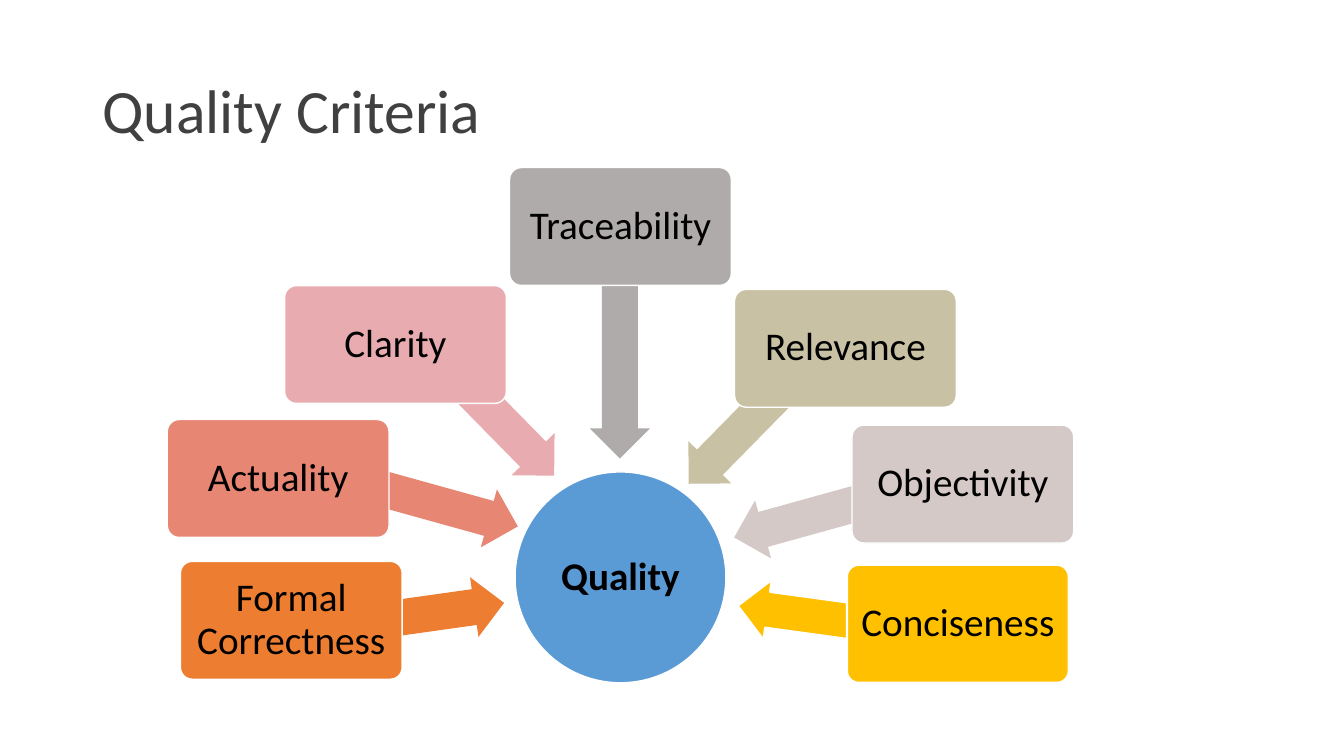
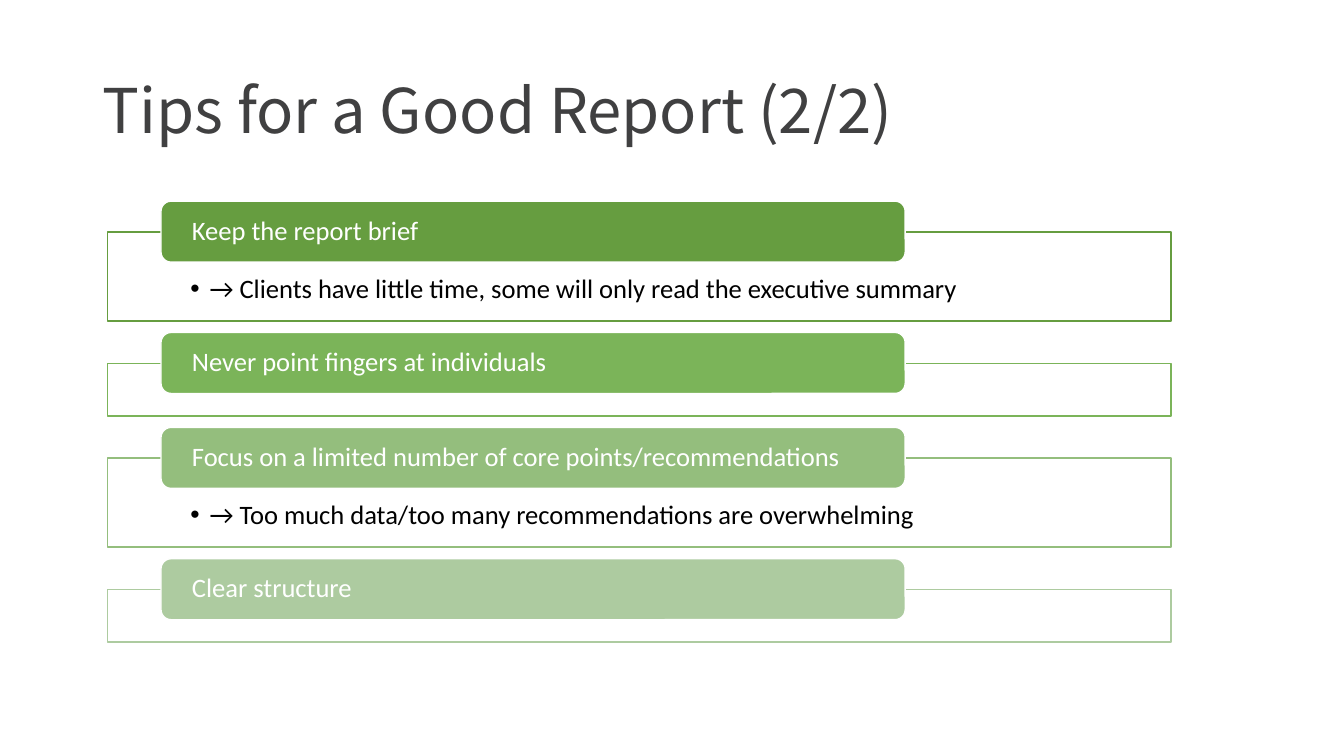
from pptx import Presentation
from pptx.dml.color import RGBColor as Rgb
from pptx.enum.shapes import MSO_SHAPE as Kind
from pptx.enum.text import MSO_ANCHOR as Anchor, MSO_AUTO_SIZE as Fit, PP_ALIGN as Align
from pptx.oxml.ns import qn
from pptx.util import Pt
from lxml.etree import SubElement as Sub

HUES = {
    "white": "FFFFFF", "black": "000000", "title": "404041", "hub": "5B9BD5",
    "orange": "ED7D31", "coral": "E78672", "pink": "E8ACB0", "gray": "AFABAB",
    "sand": "C9C1A3", "mist": "D4C9C6", "gold": "FFC000",
    "green1": "669D40", "green2": "7BB459", "green3": "94BE7D", "green4": "ADCBA0",
}
FONT = "Calibri"
BOX = (158.4, 84.2)
THICK = 43
HUB = (367.9, 337.1, 150.6, 150.6)

CRITERIA = [
    ("Formal Correctness", "orange", (128.9, 401), (207.4, 419.8), 153.4, 172),
    ("Actuality", "coral", (119.5, 299.7), (203.8, 331.9), 169.2, 195.5),
    ("Clarity", "pink", (203.3, 204), (272.2, 266.4), 145.4, 225.5),
    ("Traceability", "gray", (364, 119.7), (360, 223.2), 165.6, 270),
    ("Relevance", "sand", (524.7, 206.7), (470.2, 272.2), 145.4, 314.5),
    ("Objectivity", "mist", (608.6, 303.7), (521.3, 339.8), 169.2, 344.5),
    ("Conciseness", "gold", (605, 403.5), (526.3, 421.9), 158.4, 7.8),
]
TIPS = [
    ("Keep the report brief", "green1",
     "→ Clients have little time, some will only read the executive summary"),
    ("Never point fingers at individuals", "green2", None),
    ("Focus on a limited number of core points/recommendations", "green3",
     "→ Too much data/too many recommendations are overwhelming"),
    ("Clear structure", "green4", None),
]


def tint(name):
    """Return the named colour."""
    return Rgb.from_string(HUES[name])


def write(para, text, size, hue, font=FONT, bold=False):
    """Add one styled run to a paragraph."""
    para.line_spacing = 0.9
    run = para.add_run()
    run.text = text
    run.font.size = Pt(size)
    run.font.name = font
    run.font.bold = bold
    run.font.color.rgb = tint(hue)


def shape(slide, kind, area, fill, line=None, width=1):
    """Add a flat filled shape with an optional outline."""
    item = slide.shapes.add_shape(kind, *map(Pt, area))
    item.shadow.inherit = False
    item.fill.solid()
    item.fill.fore_color.rgb = tint(fill)
    if line:
        item.line.color.rgb = tint(line)
        item.line.width = Pt(width)
    else:
        item.line.fill.background()
    return item


def label(item, text, size, hue, pads, align, anchor=Anchor.MIDDLE, bold=False):
    """Write text inside a shape and return its paragraph."""
    frame = item.text_frame
    frame.word_wrap = True
    frame.vertical_anchor = anchor
    (frame.margin_left, frame.margin_top,
     frame.margin_right, frame.margin_bottom) = map(Pt, pads)
    para = frame.paragraphs[0]
    para.alignment = align
    write(para, text, size, hue, bold=bold)
    return para


def bullet(para, indent):
    """Give a paragraph a hanging round bullet."""
    props = para._p.get_or_add_pPr()
    props.set("marL", str(Pt(indent)))
    props.set("indent", str(-Pt(indent)))
    Sub(props, qn("a:buFont")).set("typeface", "Arial")
    Sub(props, qn("a:buChar")).set("char", "•")


def fade(item, share):
    """Set the opacity of a solid fill in percent."""
    color = item._element.spPr.find(qn("a:solidFill"))[0]
    Sub(color, qn("a:alpha")).set("val", str(share * 1000))


def page(deck, title, font):
    """Add a slide with its title."""
    slide = deck.slides.add_slide(deck.slide_layouts[5])
    frame = slide.shapes.title.text_frame
    frame.auto_size = Fit.NONE
    para = frame.paragraphs[0]
    para.alignment = Align.LEFT
    write(para, title, 44, "title", font)
    return slide


def arrow(slide, spot, length, turn, hue, line):
    """Add a turned block arrow."""
    item = shape(slide, Kind.LEFT_ARROW, (*spot, length, THICK), hue, line, 1.5)
    item.adjustments[0] = 0.6
    item.adjustments[1] = 0.5
    item.rotation = turn


def wheel(slide):
    """Draw the hub and the criteria that point to it."""
    hub = shape(slide, Kind.OVAL, HUB, "hub", "white")
    label(hub, "Quality", 28, "black", (0,) * 4, Align.CENTER, bold=True)
    for text, hue, spot, start, length, turn in CRITERIA:
        edged = hue == "gold"
        arrow(slide, start, length, turn, hue, "white" if edged else None)
        box = shape(slide, Kind.ROUNDED_RECTANGLE, (*spot, *BOX), hue,
                    "white", 1.5 if edged else 1)
        box.adjustments[0] = 0.1
        label(box, text, 28, "black", (3,) * 4, Align.CENTER)


def stack(slide):
    """Draw the tips as tabs over outlined panels."""
    top = 165.7
    for text, hue, note in TIPS:
        high = 63.6 if note else 37.6
        panel = shape(slide, Kind.RECTANGLE, (77, top, 759.6, high), "white", hue)
        fade(panel, 90)
        if note:
            para = label(panel, note, 19, "black", (59, 31, 59, 10.8),
                         Align.LEFT, Anchor.TOP)
            bullet(para, 13.7)
        tab = shape(slide, Kind.ROUNDED_RECTANGLE, (115, top - 22, 531.6, 43.6),
                    hue, "white")
        label(tab, text, 19, "white", (20, 0, 20, 0), Align.LEFT)
        top += high + 30.2


def main():
    """Build and save the deck."""
    deck = Presentation()
    deck.slide_width, deck.slide_height = Pt(960), Pt(540)
    head = deck.slide_layouts[5].placeholders[0]
    head.left, head.top, head.width, head.height = map(Pt, (66, 28.8, 828, 104.4))
    head.text_frame.vertical_anchor = Anchor.MIDDLE
    wheel(page(deck, "Quality Criteria", FONT))
    stack(page(deck, "Tips for a Good Report (2/2)", "Noto Sans CJK SC"))
    deck.save("out.pptx")


if __name__ == "__main__":
    main()
